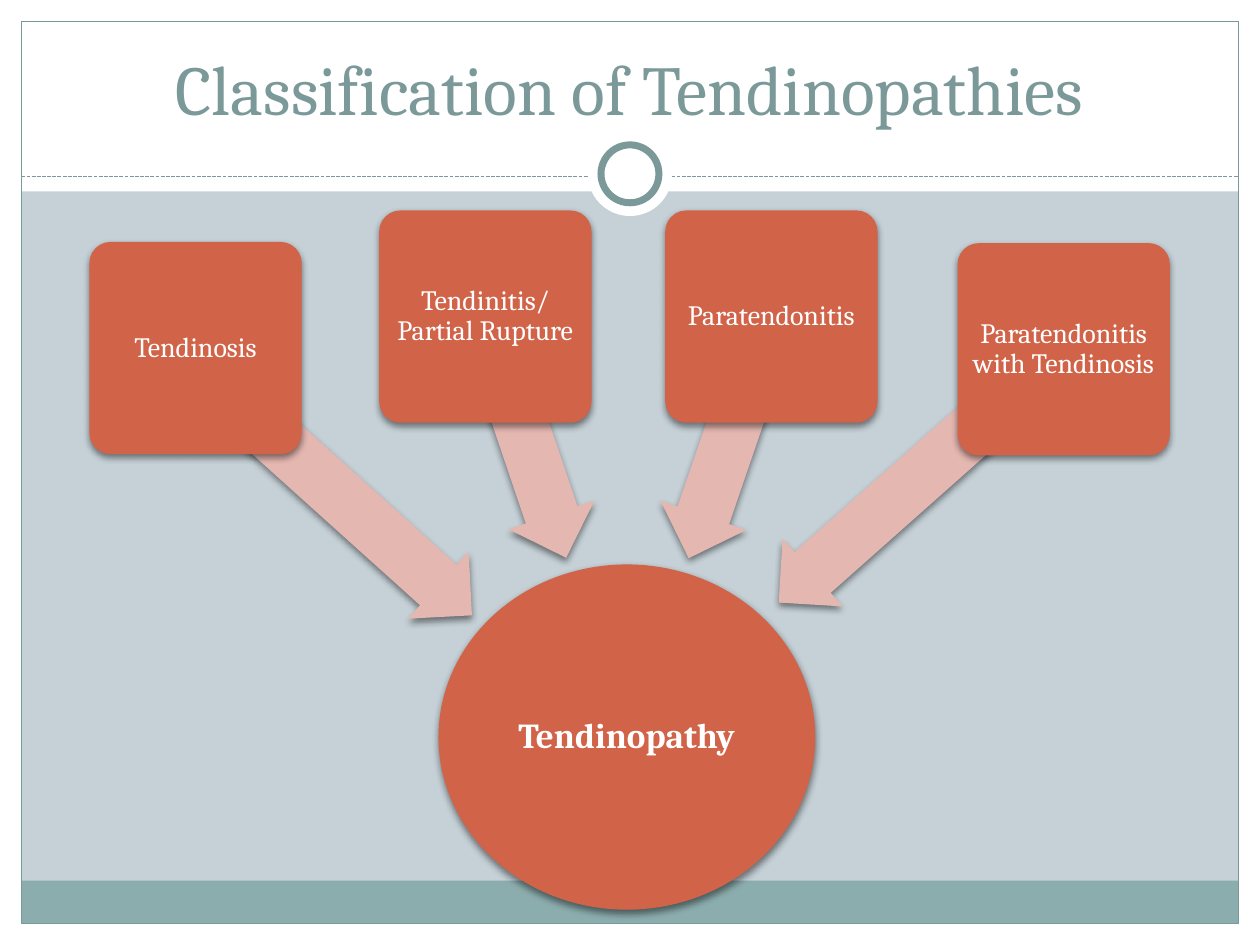
from dataclasses import dataclass

import lxml.etree
import pptx
import pptx.dml.color
import pptx.enum.dml
import pptx.enum.shapes
import pptx.enum.text
import pptx.oxml.ns
import pptx.util

SHAPE = pptx.enum.shapes.MSO_SHAPE
CENTER = pptx.enum.text.PP_ALIGN.CENTER
ANCHOR = pptx.enum.text.MSO_ANCHOR
COLUMNS, ROWS = 100, 75  # grid cells of 0.1 inch
MARGIN = 1.7


@dataclass(frozen=True)
class Theme:
    font: str = "Cambria"
    background: str = "C5D1D7"
    white: str = "FFFFFF"
    accent: str = "7C999A"
    band: str = "8CADAE"
    node: str = "D16349"
    arrow: str = "E5B7B1"
    title_size: int = 40
    hub_size: int = 20
    box_size: int = 16


THEME = Theme()

# label, box left and top, arrow centre x and y, arrow length, arrow rotation
CAUSES = [
    ("Tendinosis", 7.1, 19.2, 27.2, 39.6, 27.6, 222),
    ("Tendinitis/Partial Rupture", 30.1, 16.7, 41.7, 34.7, 20.2, 251.3),
    ("Paratendonitis", 52.8, 16.7, 57.95, 34.7, 20.3, 288.9),
    ("Paratendonitis with Tendinosis", 76, 19.3, 73.1, 37.8, 30.2, 318.4),
]
BOX_SIDE = 16.85
ARROW_WIDTH = 7.2


def grid(cells):
    return pptx.util.Inches(cells / 10)


def rgb(value):
    return pptx.dml.color.RGBColor.from_string(value)


def set_line(line, width):
    line.color.rgb = rgb(THEME.accent)
    line.width = pptx.util.Pt(width)


def add_shape(slide, kind, x, y, w, h, fill=None, line_width=None):
    sp = slide.shapes.add_shape(kind, grid(x), grid(y), grid(w), grid(h))
    sp.shadow.inherit = False
    if fill:
        sp.fill.solid()
        sp.fill.fore_color.rgb = rgb(fill)
    else:
        sp.fill.background()
    if line_width:
        set_line(sp.line, line_width)
    else:
        sp.line.fill.background()
    return sp


def add_shadow(sp):
    """Give the shape a soft black shadow straight below it."""
    effects = sp._element.spPr.find(pptx.oxml.ns.qn("a:effectLst"))
    shadow = lxml.etree.SubElement(
        effects, pptx.oxml.ns.qn("a:outerShdw"), blurRad=str(pptx.util.Pt(4)),
        dist=str(pptx.util.Pt(2)), dir="5400000", rotWithShape="0")
    color = lxml.etree.SubElement(shadow, pptx.oxml.ns.qn("a:srgbClr"), val="000000")
    lxml.etree.SubElement(color, pptx.oxml.ns.qn("a:alpha"), val="45000")


def format_paragraph(p, size, color, bold=False):
    p.alignment = CENTER
    p.font.name = THEME.font
    p.font.size = pptx.util.Pt(size)
    p.font.color.rgb = rgb(color)
    p.font.bold = bold


def add_node(slide, kind, x, y, w, h, text, size, inset, bold=False):
    sp = add_shape(slide, kind, x, y, w, h, THEME.node)
    add_shadow(sp)
    tf = sp.text_frame
    tf.word_wrap = True
    tf.vertical_anchor = ANCHOR.MIDDLE
    tf.margin_left = tf.margin_right = tf.margin_top = tf.margin_bottom = grid(inset)
    p = tf.paragraphs[0]
    p.text = text
    p.line_spacing = 0.9
    format_paragraph(p, size, THEME.white, bold)
    return sp


def add_arrow(slide, cx, cy, length, rotation):
    sp = add_shape(slide, SHAPE.LEFT_ARROW, cx - length / 2, cy - ARROW_WIDTH / 2,
                   length, ARROW_WIDTH, THEME.arrow)
    sp.adjustments[0], sp.adjustments[1] = 0.6, 0.5
    sp.rotation = rotation
    add_shadow(sp)


def add_frame(slide):
    inner_w, inner_h = COLUMNS - 2 * MARGIN, ROWS - 2 * MARGIN
    borders = [
        (0, ROWS - MARGIN, COLUMNS, MARGIN),
        (0, 0, COLUMNS, 15.2),
        (0, 0, MARGIN, ROWS),
        (COLUMNS - MARGIN, 0, MARGIN, ROWS),
    ]
    for border in borders:
        add_shape(slide, SHAPE.RECTANGLE, *border, THEME.white)
    add_shape(slide, SHAPE.RECTANGLE, MARGIN, 69.9, inner_w, 3.4, THEME.band)
    add_shape(slide, SHAPE.RECTANGLE, MARGIN, MARGIN, inner_w, inner_h, line_width=0.75)

    rule = slide.shapes.add_connector(
        pptx.enum.shapes.MSO_CONNECTOR.STRAIGHT,
        grid(MARGIN), grid(14), grid(COLUMNS - MARGIN), grid(14))
    set_line(rule.line, 0.75)
    rule.line.dash_style = pptx.enum.dml.MSO_LINE.SQUARE_DOT
    lxml.etree.SubElement(rule._element.spPr, pptx.oxml.ns.qn("a:effectLst"))

    for diameter, line_width in ((6.7, None), (4.6, 4)):
        add_shape(slide, SHAPE.OVAL, (COLUMNS - diameter) / 2, 13.8 - diameter / 2,
                  diameter, diameter, THEME.white, line_width)


def set_title(slide, text):
    title = slide.shapes.title
    slide.shapes._spTree.append(title._element)  # in front of the white frame
    title.left, title.top = grid(3.3), grid(2.5)
    title.width, title.height = grid(93.3), grid(8.3)
    title.text_frame.vertical_anchor = ANCHOR.BOTTOM
    p = title.text_frame.paragraphs[0]
    p.text = text
    format_paragraph(p, THEME.title_size, THEME.accent)


def add_diagram(slide):
    add_node(slide, SHAPE.OVAL, 34.8, 44.8, 29.9, 27.4, "Tendinopathy",
             THEME.hub_size, 0.1, bold=True)
    for label, x, y, cx, cy, length, rotation in CAUSES:
        add_arrow(slide, cx, cy, length, rotation)
        box = add_node(slide, SHAPE.ROUNDED_RECTANGLE, x, y, BOX_SIDE, BOX_SIDE,
                       label, THEME.box_size, 0.3)
        box.adjustments[0] = 0.1


def main():
    prs = pptx.Presentation()
    prs.slide_width, prs.slide_height = grid(COLUMNS), grid(ROWS)
    slide = prs.slides.add_slide(prs.slide_layouts.get_by_name("Title Only"))
    slide.background.fill.solid()
    slide.background.fill.fore_color.rgb = rgb(THEME.background)
    add_frame(slide)
    set_title(slide, "Classification of Tendinopathies")
    add_diagram(slide)
    prs.save("out.pptx")


if __name__ == "__main__":
    main()
